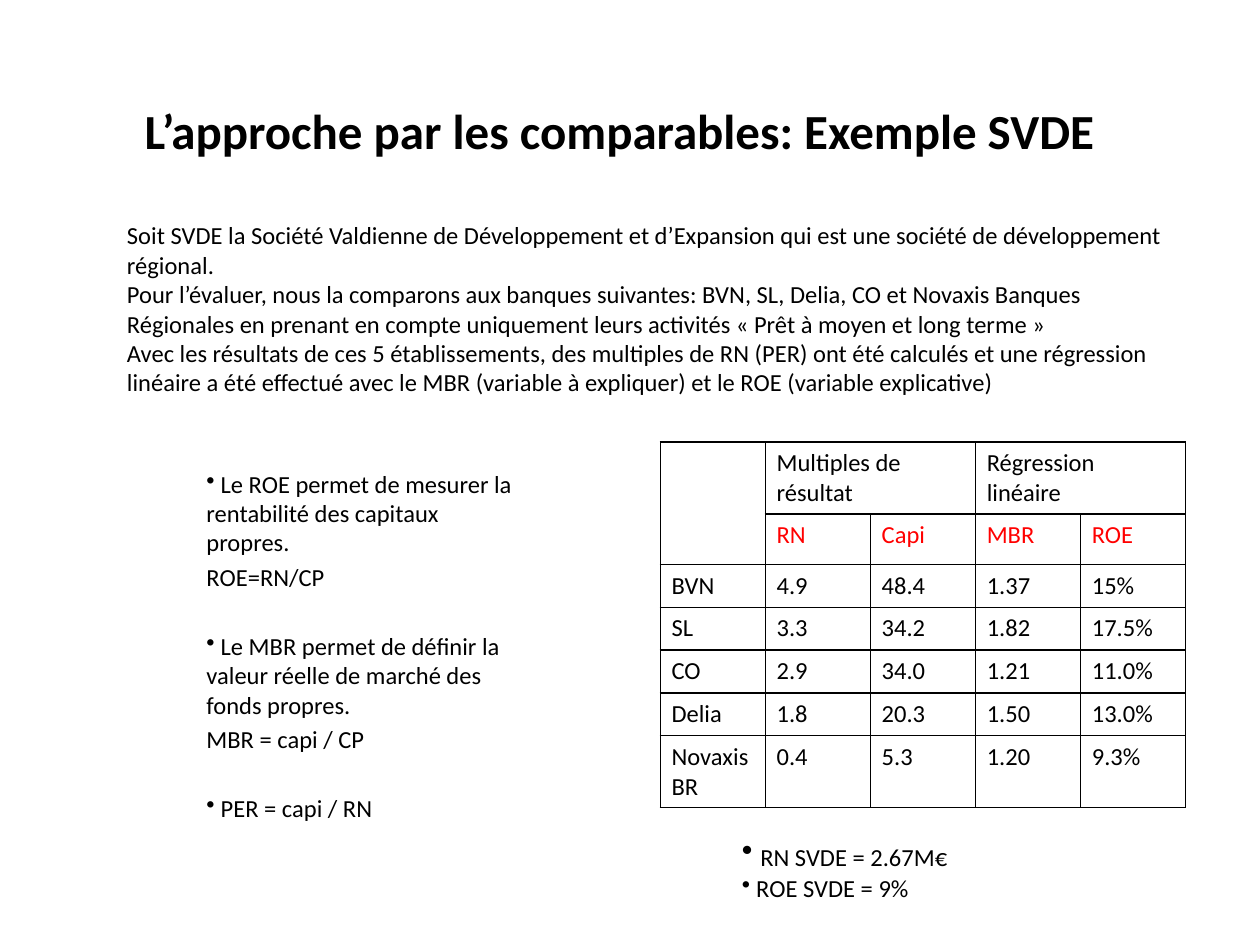
from lxml import etree
from pptx import Presentation
from pptx.dml.color import RGBColor
from pptx.enum.text import MSO_ANCHOR, PP_ALIGN
from pptx.oxml.ns import qn
from pptx.util import Inches, Pt

BOTTOM = MSO_ANCHOR.BOTTOM
CENTER = PP_ALIGN.CENTER
FONT = "Calibri"
COLORS = {"text": "000000", "head": "FF0000", "line": "000000"}
SIDES = ("a:lnL", "a:lnR", "a:lnT", "a:lnB")

TITLE = "L’approche par les comparables: Exemple SVDE"
INTRO = [
    "Soit SVDE la Société Valdienne de Développement et d’Expansion qui est une "
    "société de développement régional.",
    "Pour l’évaluer, nous la comparons aux banques suivantes: BVN, SL, Delia, CO et "
    "Novaxis Banques Régionales en prenant en compte uniquement leurs activités "
    "« Prêt à moyen et long terme »",
    "Avec les résultats de ces 5 établissements, des multiples de RN (PER) ont été "
    "calculés et une régression linéaire a été effectué avec le MBR (variable à "
    "expliquer) et le ROE (variable explicative)",
]
NOTES = [
    (" Le ROE permet de mesurer la rentabilité des capitaux propres.", True),
    ("ROE=RN/CP", False),
    (" Le MBR permet de définir la valeur réelle de marché des fonds propres.", True),
    ("MBR = capi / CP", False),
    (" PER = capi / RN", True),
]
ROWS = [
    ["", "Multiples de résultat", "", "Régression linéaire", ""],
    ["", "RN", "Capi", "MBR", "ROE"],
    ["BVN", "4.9", "48.4", "1.37", "15%"],
    ["SL", "3.3", "34.2", "1.82", "17.5%"],
    ["CO", "2.9", "34.0", "1.21", "11.0%"],
    ["Delia", "1.8", "20.3", "1.50", "13.0%"],
    ["Novaxis BR", "0.4", "5.3", "1.20", "9.3%"],
]
SPANS = [((0, 0), (1, 0)), ((0, 1), (0, 2)), ((0, 3), (0, 4))]


def style(para, size=14, color="text", bold=False):
    """Format every run of a paragraph."""
    for run in para.runs:
        run.font.name = FONT
        run.font.size = Pt(size)
        run.font.bold = bold
        run.font.color.rgb = RGBColor.from_string(COLORS[color])


def bullet(para):
    """Give a paragraph a round bullet without a hanging indent."""
    props = para._p.get_or_add_pPr()
    props.set("marL", "0")
    props.set("indent", "0")
    etree.SubElement(props, qn("a:buChar")).set("char", "•")


def add_text(slide, box, lines):
    """Add a wrapped text box with one paragraph per line."""
    frame = slide.shapes.add_textbox(*map(Inches, box)).text_frame
    frame.word_wrap = True
    frame.text = "\n".join(lines)
    for para in frame.paragraphs:
        style(para)
    return frame


def add_title(slide, box):
    """Place the centred title at the bottom of its box."""
    frame = add_text(slide, box, [TITLE])
    frame.vertical_anchor = BOTTOM
    para = frame.paragraphs[0]
    para.alignment = CENTER
    style(para, 28, bold=True)


def add_notes(slide, box):
    """Place the definitions, with a wide gap before each new bullet."""
    frame = add_text(slide, box, [line for line, _ in NOTES])
    for i, (para, (_, mark)) in enumerate(zip(frame.paragraphs, NOTES)):
        para.space_before = Pt(22.6 if mark and i else 2.8)
        if mark:
            bullet(para)


def add_facts(slide, box):
    """Place the two key figures, the first led by a larger bullet."""
    frame = add_text(slide, box, [" ", " ROE SVDE = 9%"])
    first = frame.paragraphs[0]
    first.add_run().text = "RN SVDE = 2.67M€"
    style(first)
    first.runs[0].font.size = Pt(18)
    for para in frame.paragraphs:
        bullet(para)


def add_border(cell):
    """Draw a thin line on all four sides of a cell."""
    props = cell._tc.get_or_add_tcPr()
    for i, side in enumerate(SIDES):
        line = etree.Element(qn(side), w=str(Pt(1)))
        fill = etree.SubElement(line, qn("a:solidFill"))
        etree.SubElement(fill, qn("a:srgbClr")).set("val", COLORS["line"])
        props.insert(i, line)


def add_grid(slide, box):
    """Place the table of ratios by bank."""
    shape = slide.shapes.add_table(len(ROWS), len(ROWS[0]), *map(Inches, box))
    table = shape.table
    table.first_row = table.horz_banding = False
    for col in table.columns:
        col.width = Inches(box[2] / len(ROWS[0]))
    for i, row in enumerate(table.rows):
        row.height = Inches(0.57 if i in (0, len(ROWS) - 1) else 0.34)
        for cell, word in zip(row.cells, ROWS[i]):
            cell.text = word
            cell.margin_left = cell.margin_right = Inches(0.09)
            cell.fill.background()
            add_border(cell)
            style(cell.text_frame.paragraphs[0], color="head" if i == 1 else "text")
    for start, end in SPANS:
        table.cell(*start).merge(table.cell(*end))


def main():
    """Build the slide and save it."""
    deck = Presentation()
    deck.slide_width, deck.slide_height = Inches(10), Inches(7.5)
    slide = deck.slides.add_slide(deck.slide_layouts[6])
    add_title(slide, (0.5, 0.3, 8.83, 1.01))
    add_grid(slide, (5.24, 3.51, 4.17, 2.84))
    add_notes(slide, (1.54, 3.67, 2.65, 3.15))
    add_facts(slide, (5.79, 6.58, 3.62, 0.64))
    add_text(slide, (0.91, 1.7, 8.43, 1.75), INTRO)
    deck.save("out.pptx")


if __name__ == "__main__":
    main()
